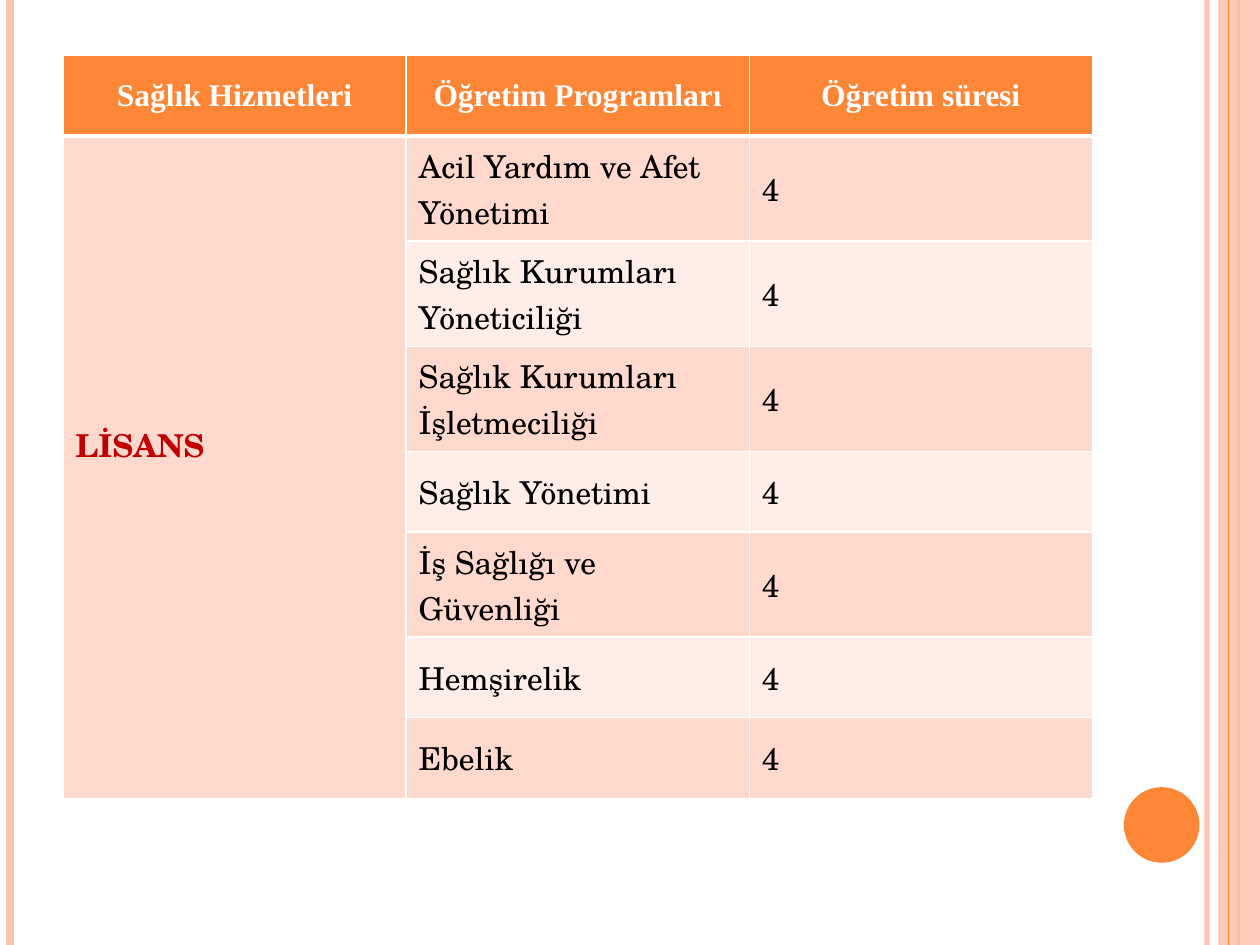
from lxml import etree
from pptx import Presentation, util as u
from pptx.dml.color import RGBColor
from pptx.enum import shapes, text
from pptx.oxml import ns

ORANGE, PEACH, WHITE = "FE8637", "FEC3AE", "FFFFFF"
BANDS = ["FFEDE8", "FFD9CE"]


def paint(fill, color, opacity=100):
    fill.solid()
    fill.fore_color.rgb = RGBColor.from_string(color)
    if opacity < 100:
        clr = fill._xPr.find(".//" + ns.qn("a:srgbClr"))
        etree.SubElement(clr, ns.qn("a:alpha"), val=str(opacity * 1000))


def border(cell, widths):
    """Draw white cell borders; widths maps L, R, T, B to points."""
    tcPr = cell._tc.get_or_add_tcPr()
    for place, (side, width) in enumerate(widths.items()):
        ln = etree.Element(ns.qn(f"a:ln{side}"), w=str(u.Pt(width)))
        solid = etree.SubElement(ln, ns.qn("a:solidFill"))
        etree.SubElement(solid, ns.qn("a:srgbClr"), val=WHITE)
        tcPr.insert(place, ln)


deck = Presentation()
deck.slide_width, deck.slide_height = u.Inches(10), u.Inches(7.5)
slide = deck.slides.add_slide(deck.slide_layouts[6])
W, H = deck.slide_width, deck.slide_height

# Side decoration, from back to front
stripes = [(0.958, PEACH, 3, 93), (0.008, PEACH, 4.5, 100),
           (0.983, ORANGE, 1.5, 100), (0.975, ORANGE, 0.75, 100)]
for order, (share, color, width, opacity) in enumerate(stripes):
    if order == 3:
        band = slide.shapes.add_shape(
            shapes.MSO_SHAPE.RECTANGLE, int(W * 0.967), 0, int(W * 0.033), H)
        band.shadow.inherit = False
        paint(band.fill, PEACH, 87)
        band.line.fill.background()
    x = int(W * share)
    stripe = slide.shapes.add_connector(shapes.MSO_CONNECTOR.STRAIGHT, x, 0, x, H)
    stripe.line.width = u.Pt(width)
    paint(stripe.line.fill, color, opacity)
    etree.SubElement(stripe._element.spPr, ns.qn("a:effectLst"))

disc = slide.shapes.add_shape(
    shapes.MSO_SHAPE.OVAL, int(W * 0.892), int(H * 0.833), int(W * 0.06), int(W * 0.06))
disc.shadow.inherit = False
paint(disc.fill, ORANGE)
disc.line.fill.background()

# Programme table
headings = ["Sağlık Hizmetleri", "Öğretim Programları", "Öğretim süresi"]
programmes = ["Acil Yardım ve Afet Yönetimi", "Sağlık Kurumları Yöneticiliği",
              "Sağlık Kurumları İşletmeciliği", "Sağlık Yönetimi",
              "İş Sağlığı ve Güvenliği", "Hemşirelik", "Ebelik"]
rows = [headings] + [["", name, "4"] for name in programmes]
rows[1][0] = "LİSANS"
table = slide.shapes.add_table(
    len(rows), 3, u.Inches(0.5), u.Inches(0.44), u.Inches(8.17), u.Inches(5.36)).table

heading_font = {"name": "Times New Roman", "size": u.Pt(18), "bold": True}
body_font = {"name": "TeX Gyre Schola", "size": u.Pt(18), "bold": False}
degree_font = {**body_font, "bold": True}
no_margins = dict.fromkeys(
    ["margin_left", "margin_right", "margin_top", "margin_bottom"], 0)

for r, row in enumerate(rows):
    two_lines = r > 0 and len(row[1]) > 20
    table.rows[r].height = u.Inches(0.83 if two_lines else 0.64)
    for c, words in enumerate(row):
        cell = table.cell(r, c)
        cell.vertical_anchor = text.MSO_ANCHOR.MIDDLE
        if r == 0:
            fill, ink, font, margins = ORANGE, WHITE, heading_font, no_margins
        elif c == 0:
            fill, ink, font = BANDS[1], "C00000", degree_font
            margins = {"margin_bottom": u.Inches(0.4)}
        else:
            fill, ink, font, margins = BANDS[r % 2], "000000", body_font, {}
        paint(cell.fill, fill)
        border(cell, {"L": 1, "R": 1, "T": 3 if r == 1 else 1, "B": 3 if r == 0 else 1})
        for key, value in margins.items():
            setattr(cell, key, value)
        if not words:
            continue
        paragraph = cell.text_frame.paragraphs[0]
        paragraph.alignment = text.PP_ALIGN.CENTER if r == 0 else text.PP_ALIGN.LEFT
        run = paragraph.add_run()
        run.text = words
        for key, value in font.items():
            setattr(run.font, key, value)
        paint(run.font.fill, ink)

table.cell(1, 0).merge(table.cell(len(programmes), 0))

deck.save("out.pptx")
